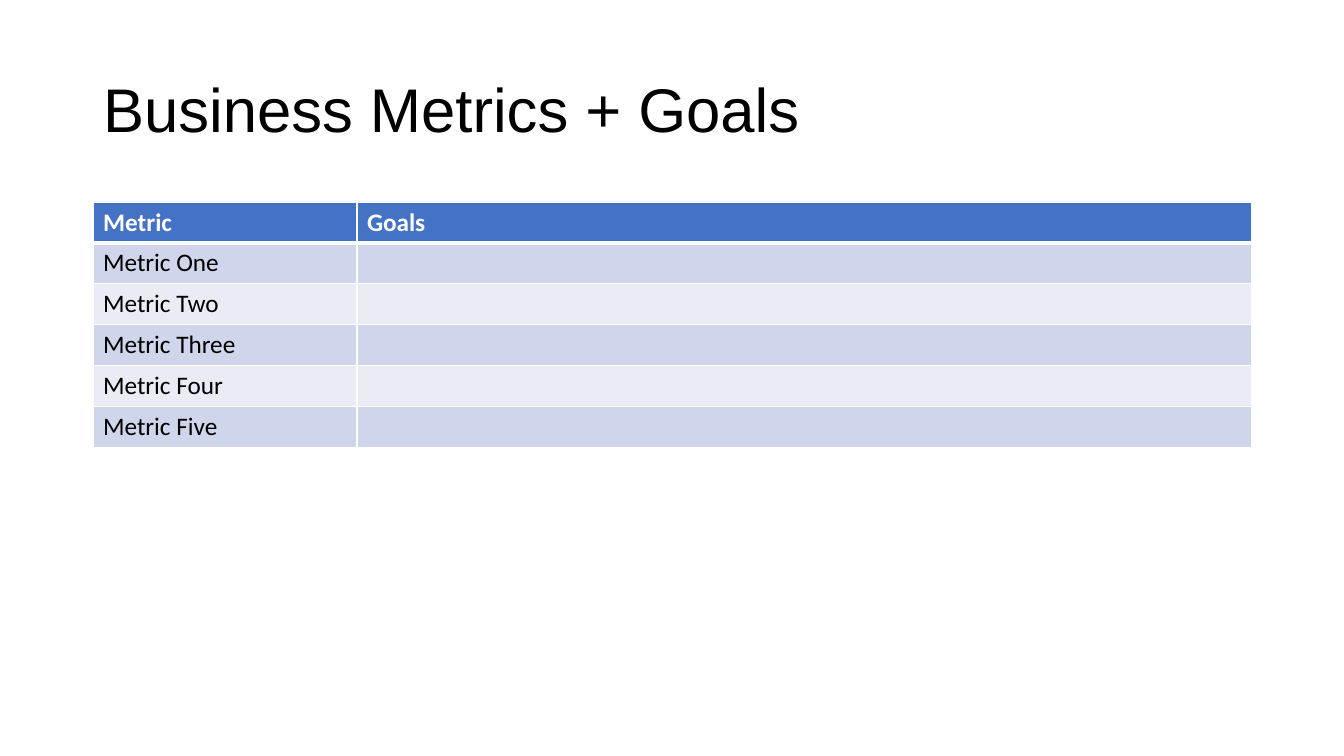
from dataclasses import dataclass

from lxml.etree import SubElement
from pptx import Presentation
from pptx.dml.color import RGBColor as RGB
from pptx.enum.text import MSO_ANCHOR as Anchor, PP_ALIGN as Align
from pptx.oxml.ns import qn
from pptx.util import Emu, Pt

# Content
TITLE = "Business Metrics + Goals"
ROWS = [
    ("Metric", "Goals"),
    ("Metric One", ""),
    ("Metric Two", ""),
    ("Metric Three", ""),
    ("Metric Four", ""),
    ("Metric Five", ""),
]

# Layout in px
SLIDE = (1344, 756)
TITLE_BOX = (93, 40, 1159, 146)
TABLE_BOX = (93, 202, 1159, 245)
METRIC_WIDTH = 264


@dataclass(frozen=True)
class Theme:
    title_font: str = "Arial"
    body_font: str = "Calibri"
    title_size: int = 44
    body_size: int = 18
    ink: str = "000000"
    white: str = "FFFFFF"
    header: str = "4472C4"
    bands: tuple = ("CFD5EA", "E9EBF5")
    rule: int = 1
    header_rule: int = 3


T = Theme()


def px(n):
    return Emu(round(n * 914400 / 100.8))


def style(font, name, size, color, bold=False):
    font.name, font.size, font.bold = name, Pt(size), bold
    font.color.rgb = RGB.from_string(color)


def add_borders(cell, top, bottom):
    tcPr = cell._tc.get_or_add_tcPr()
    for side, width in (("L", T.rule), ("R", T.rule), ("T", top), ("B", bottom)):
        ln = SubElement(tcPr, qn(f"a:ln{side}"), w=str(Pt(width)))
        fill = SubElement(ln, qn("a:solidFill"))
        SubElement(fill, qn("a:srgbClr"), val=T.white)


prs = Presentation()
prs.slide_width, prs.slide_height = map(px, SLIDE)
s = prs.slides.add_slide(prs.slide_layouts[5])

# Title
title = s.shapes.title
title.left, title.top, title.width, title.height = map(px, TITLE_BOX)
tf = title.text_frame
tf.word_wrap = True
tf.vertical_anchor = Anchor.MIDDLE
p = tf.paragraphs[0]
p.alignment = Align.LEFT
p.line_spacing = 0.9
r = p.add_run()
r.text = TITLE
style(r.font, T.title_font, T.title_size, T.ink)

# Metrics table
table = s.shapes.add_table(len(ROWS), 2, *map(px, TABLE_BOX)).table
table.columns[0].width = px(METRIC_WIDTH)
table.columns[1].width = px(TABLE_BOX[2] - METRIC_WIDTH)

for i, row in enumerate(ROWS):
    table.rows[i].height = px(TABLE_BOX[3] / len(ROWS))
    is_header = i == 0
    fill = T.header if is_header else T.bands[(i - 1) % 2]
    color = T.white if is_header else T.ink
    top = T.header_rule if i == 1 else T.rule
    bottom = T.header_rule if is_header else T.rule
    for j, text in enumerate(row):
        cell = table.cell(i, j)
        add_borders(cell, top, bottom)
        cell.fill.solid()
        cell.fill.fore_color.rgb = RGB.from_string(fill)
        p = cell.text_frame.paragraphs[0]
        if text:
            r = p.add_run()
            r.text = text
            style(r.font, T.body_font, T.body_size, color, is_header)

prs.save("out.pptx")
